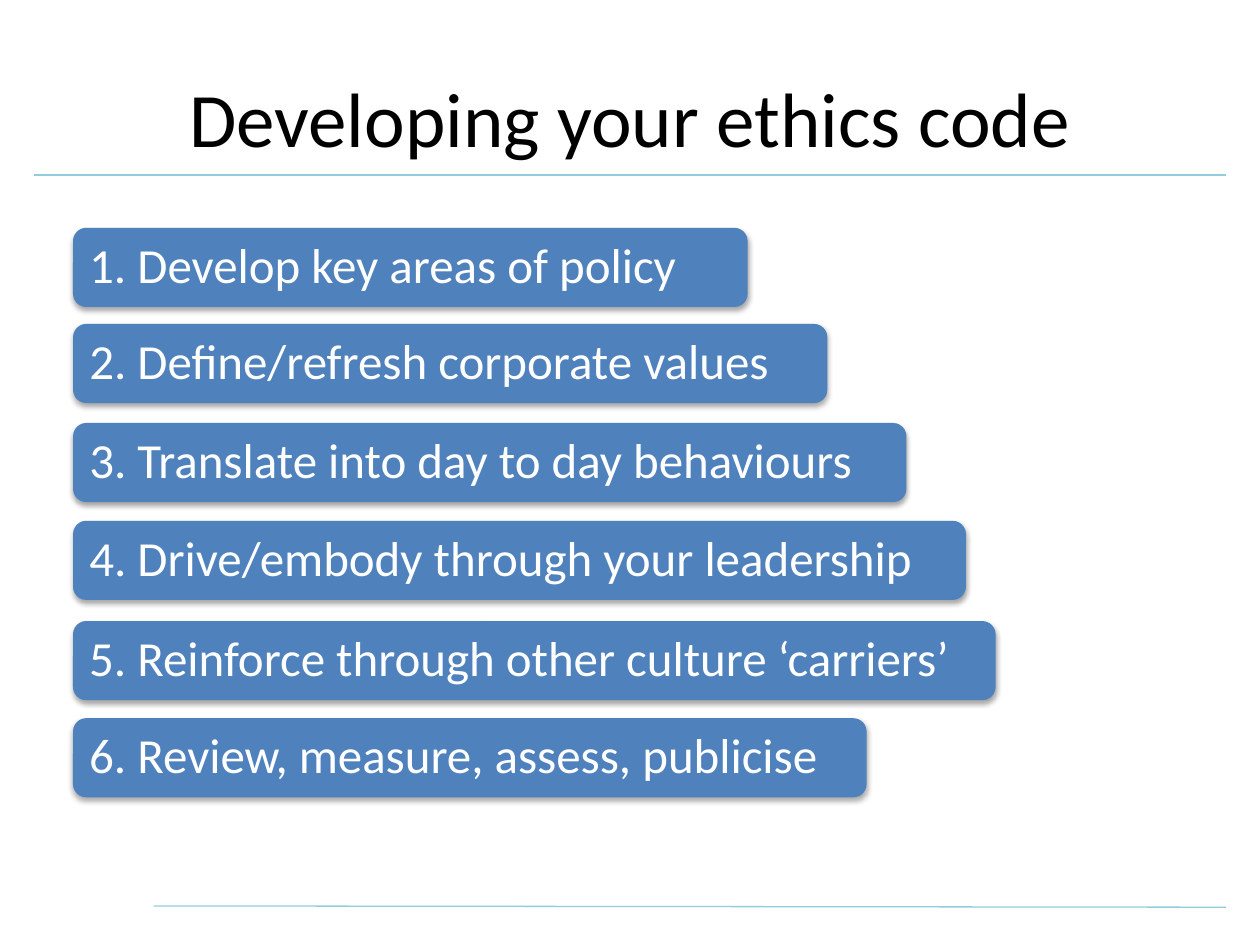
from lxml import etree
from pptx import Presentation
from pptx.dml.color import RGBColor
from pptx.enum.shapes import MSO_CONNECTOR, MSO_SHAPE
from pptx.enum.text import MSO_ANCHOR, PP_ALIGN
from pptx.oxml.ns import qn
from pptx.util import Pt

STRAIGHT = MSO_CONNECTOR.STRAIGHT
ROUNDED = MSO_SHAPE.ROUNDED_RECTANGLE
MIDDLE = MSO_ANCHOR.MIDDLE
LEFT, CENTER = PP_ALIGN.LEFT, PP_ALIGN.CENTER

COLORS = {"title": "000000", "rule": "93CDDD", "bar": "4F81BD",
          "bar_text": "FFFFFF", "shadow": "000000"}
FONT = "Calibri"
TITLE = "Developing your ethics code"
RULES = [(87.84, 517.68, 700.56, 518.4), (19.44, 100.08, 700.56, 100.08)]
STEPS = [
    ("1. Develop key areas of policy", 130.2, 385.5),
    ("2. Define/refresh corporate values", 185.1, 431),
    ("3. Translate into day to day behaviours", 241.7, 476.2),
    ("4. Drive/embody through your leadership", 297.6, 510.2),
    ("5. Reinforce through other culture ‘carriers’", 354.9, 527.2),
    ("6. Review, measure, assess, publicise", 410.4, 453.5),
]
BAR_LEFT, BAR_HEIGHT, BAR_INSET = 41.76, 45.2, 7.2


def color(name):
    return RGBColor.from_string(COLORS[name])


def write(shape, text, size, color_name, alignment):
    frame = shape.text_frame
    frame.text = text
    frame.word_wrap = True
    frame.vertical_anchor = MIDDLE
    paragraph = frame.paragraphs[0]
    paragraph.alignment = alignment
    font = paragraph.runs[0].font
    font.name, font.size = FONT, Pt(size)
    font.color.rgb = color(color_name)
    return frame


def add_rule(slide, ends):
    rule = slide.shapes.add_connector(STRAIGHT, *map(Pt, ends))
    rule.line.color.rgb = color("rule")
    rule.line.width = Pt(0.75)
    etree.SubElement(rule._element.spPr, qn("a:effectLst"))


def add_shadow(shape):
    shape.shadow.inherit = False
    effects = shape._element.spPr.find(qn("a:effectLst"))
    shadow = etree.SubElement(effects, qn("a:outerShdw"), blurRad=str(Pt(3.1)),
                              dist=str(Pt(1.8)), dir="5400000", rotWithShape="0")
    tint = etree.SubElement(shadow, qn("a:srgbClr"), val=COLORS["shadow"])
    etree.SubElement(tint, qn("a:alpha"), val="35000")


def add_step(slide, text, top, width):
    bar = slide.shapes.add_shape(ROUNDED, Pt(BAR_LEFT), Pt(top), Pt(width), Pt(BAR_HEIGHT))
    bar.fill.solid()
    bar.fill.fore_color.rgb = color("bar")
    bar.line.fill.background()
    add_shadow(bar)
    frame = write(bar, text, 28, "bar_text", LEFT)
    frame.margin_left = frame.margin_right = Pt(BAR_INSET)
    frame.margin_top = frame.margin_bottom = Pt(BAR_INSET)
    frame.paragraphs[0].line_spacing = 0.9


def main():
    presentation = Presentation()
    presentation.slide_width, presentation.slide_height = Pt(720), Pt(540)
    slide = presentation.slides.add_slide(presentation.slide_layouts[5])
    title = slide.shapes.title
    title.left, title.top, title.width, title.height = Pt(36), Pt(21.6), Pt(648), Pt(90)
    write(title, TITLE, 44, "title", CENTER)
    for ends in RULES:
        add_rule(slide, ends)
    for step in STEPS:
        add_step(slide, *step)
    presentation.save("out.pptx")


if __name__ == "__main__":
    main()
